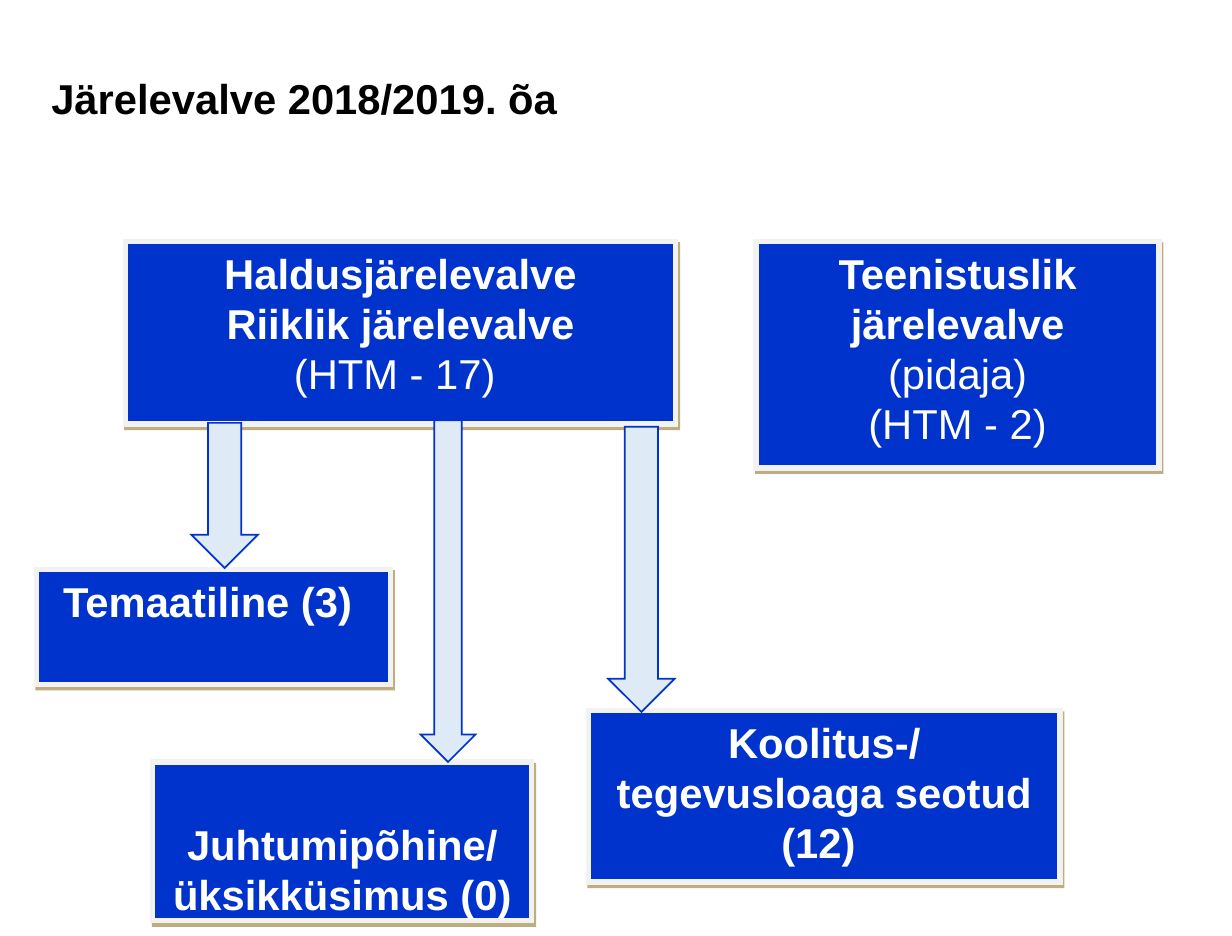
from dataclasses import dataclass

from lxml import etree
from pptx import Presentation
from pptx.dml.color import RGBColor
from pptx.enum.shapes import MSO_SHAPE
from pptx.enum.text import MSO_ANCHOR, MSO_AUTO_SIZE, PP_ALIGN
from pptx.oxml.ns import qn
from pptx.util import Inches, Pt

RECTANGLE = MSO_SHAPE.RECTANGLE
DOWN_ARROW = MSO_SHAPE.DOWN_ARROW
TOP = MSO_ANCHOR.TOP
CENTER = PP_ALIGN.CENTER
JUSTIFY = PP_ALIGN.JUSTIFY
FIT_SHAPE = MSO_AUTO_SIZE.SHAPE_TO_FIT_TEXT
TITLE_ONLY = 5
CM_PER_INCH = 2.54


@dataclass(frozen=True)
class Theme:
    font: str = "Arial"
    size: Pt = Pt(24)
    title: RGBColor = RGBColor(0x00, 0x00, 0x00)
    box: RGBColor = RGBColor(0x00, 0x33, 0xCC)
    box_text: RGBColor = RGBColor(0xFF, 0xFF, 0xFF)
    box_border: RGBColor = RGBColor(0xF2, 0xF2, 0xF2)
    box_shadow: RGBColor = RGBColor(0x7F, 0x5F, 0x00)
    arrow: RGBColor = RGBColor(0xDE, 0xEB, 0xF7)


theme = Theme()


def add_filled_shape(kind, bounds, fill, border, border_width):
    shape = slide.shapes.add_shape(kind, *map(Inches, bounds))
    shape.fill.solid()
    shape.fill.fore_color.rgb = fill
    shape.line.color.rgb = border
    shape.line.width = Pt(border_width)
    etree.SubElement(shape._element.spPr.find(qn("a:ln")), qn("a:miter"), lim="800000")
    shape.shadow.inherit = False
    return shape


def format_paragraph(paragraph, color, bold, alignment, spacing):
    paragraph.alignment = alignment
    paragraph.line_spacing = spacing
    paragraph.font.name = theme.font
    paragraph.font.size = theme.size
    paragraph.font.bold = bold
    paragraph.font.color.rgb = color


presentation = Presentation()
presentation.slide_width = Inches(25 / CM_PER_INCH)
presentation.slide_height = Inches(19 / CM_PER_INCH)
slide = presentation.slides.add_slide(presentation.slide_layouts[TITLE_ONLY])

title = slide.shapes.title
title.left, title.top, title.width, title.height = map(Inches, (0.31, 0.5, 9.21, 0.5))
title.text_frame.text = "Järelevalve 2018/2019. õa"
title.text_frame.vertical_anchor = TOP
title.text_frame.auto_size = FIT_SHAPE
format_paragraph(title.text_frame.paragraphs[0], theme.title, True, JUSTIFY, 1.07)

boxes = [
    ((1, 1.93, 4.4, 1.46), 0.05, ["Haldusjärelevalve", "Riiklik järelevalve"], ["(HTM - 17) "]),
    ((6.04, 1.93, 3.22, 1.81), 0.05, ["Teenistuslik järelevalve"], ["(pidaja)", "(HTM - 2)"]),
    ((0.29, 4.55, 2.83, 0.92), 0.05, ["Temaatiline (3) "], []),
    ((1.22, 6.09, 3.03, 1.27), 0.45, ["Juhtumipõhine/", "üksikküsimus (0)"], []),
    ((4.7, 5.68, 3.77, 1.37), 0.05, ["Koolitus-/tegevusloaga seotud (12) "], []),
]
for bounds, margin_top, bold_lines, plain_lines in boxes:
    box = add_filled_shape(RECTANGLE, bounds, theme.box, theme.box_border, 3)
    effects = box._element.spPr.find(qn("a:effectLst"))
    shadow = etree.SubElement(
        effects, qn("a:outerShdw"), dist=str(Pt(2.2)), dir=str(63 * 60000), rotWithShape="0"
    )
    color = etree.SubElement(shadow, qn("a:srgbClr"), val=str(theme.box_shadow))
    etree.SubElement(color, qn("a:alpha"), val="50000")

    frame = box.text_frame
    frame.word_wrap = True
    frame.vertical_anchor = TOP
    frame.margin_top = Inches(margin_top)
    frame.margin_bottom = 0
    frame.text = "\n".join(bold_lines + plain_lines)
    for index, paragraph in enumerate(frame.paragraphs):
        format_paragraph(paragraph, theme.box_text, index < len(bold_lines), CENTER, 1.0)

arrows = [
    (1.53, 3.38, 0.53, 1.16),
    (4.86, 3.41, 0.53, 2.28),
    (3.36, 3.36, 0.44, 2.73),
]
for bounds in arrows:
    add_filled_shape(DOWN_ARROW, bounds, theme.arrow, theme.box, 1)

presentation.save("out.pptx")
